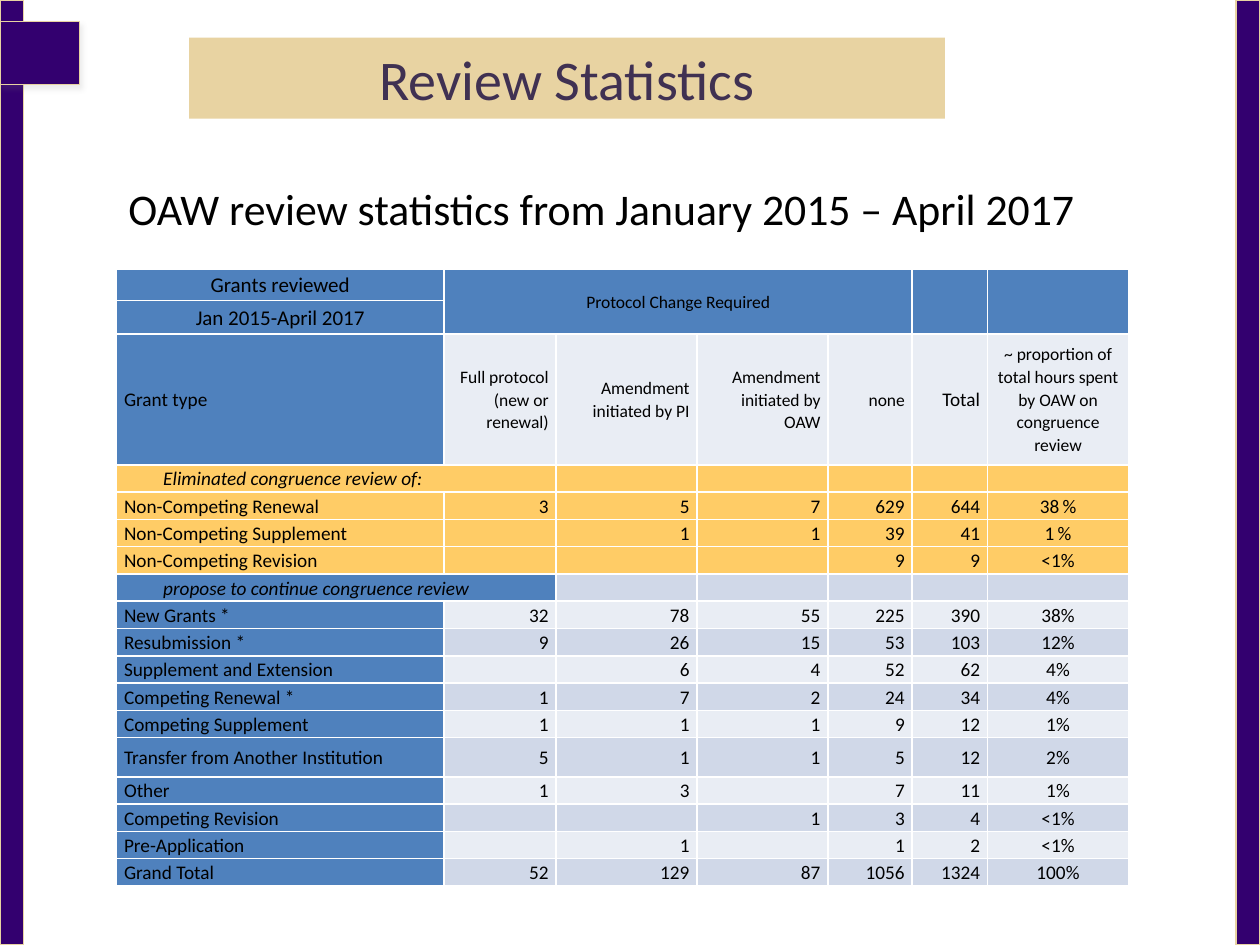
from lxml import etree
from pptx import Presentation
from pptx.dml.color import RGBColor
from pptx.enum.shapes import MSO_SHAPE
from pptx.enum.text import MSO_ANCHOR, PP_ALIGN
from pptx.oxml.ns import qn
from pptx.util import Cm, Pt

RECT = MSO_SHAPE.RECTANGLE
MIDDLE, TOP = MSO_ANCHOR.MIDDLE, MSO_ANCHOR.TOP
LEFT, CENTER, RIGHT = PP_ALIGN.LEFT, PP_ALIGN.CENTER, PP_ALIGN.RIGHT

FONT = "Calibri"
NBSP = chr(160)
PURPLE, GOLD, BLACK, WHITE = "33006F", "E8D3A2", "000000", "FFFFFF"
BLUE, YELLOW, LIGHT, DARK = "4F81BD", "FFCC66", "E9EDF4", "D0D8E8"

TITLE = "Review Statistics"
SUBTITLE = "OAW review statistics from January 2015 – April 2017"
ROWS = [
    ["Grants reviewed", "Protocol Change Required", "", "", "", "", ""],
    ["Jan 2015-April 2017", "", "", "", "", "", ""],
    ["Grant type", "Full protocol (new or renewal)", "Amendment initiated by PI",
     "Amendment initiated by OAW", "none", "Total",
     "~ proportion of total hours spent by OAW on congruence review"],
    ["Eliminated congruence review of:", "", "", "", "", "", ""],
    ["Non-Competing Renewal", "3", "5", "7", "629", "644", f"38{NBSP}%"],
    ["Non-Competing Supplement", "", "1", "1", "39", "41", f"1{NBSP}%"],
    ["Non-Competing Revision", "", "", "", "9", "9", "<1%"],
    ["propose to continue congruence review", "", "", "", "", "", ""],
    ["New Grants *", "32", "78", "55", "225", "390", "38%"],
    ["Resubmission *", "9", "26", "15", "53", "103", "12%"],
    ["Supplement and Extension", "", "6", "4", "52", "62", "4%"],
    ["Competing Renewal *", "1", "7", "2", "24", "34", "4%"],
    ["Competing Supplement", "1", "1", "1", "9", "12", "1%"],
    ["Transfer from Another Institution", "5", "1", "1", "5", "12", "2%"],
    ["Other", "1", "3", "", "7", "11", "1%"],
    ["Competing Revision", "", "", "1", "3", "4", "<1%"],
    ["Pre-Application", "", "1", "", "1", "2", "<1%"],
    ["Grand Total", "52", "129", "87", "1056", "1324", "100%"],
]
COL_WIDTHS = [6.6, 2.26, 2.84, 2.64, 1.7, 1.52, 2.84]
ROW_HEIGHT = 0.55
SPECIAL_HEIGHTS = {0: 0.64, 1: 0.67, 2: 2.64, 13: 0.79}
HEADER_ROW = 2
SECTION_ROWS = (3, 7)
ELIMINATED_ROWS = range(3, 7)
MERGES = [((0, 1), (1, 4)), ((0, 5), (1, 5)), ((0, 6), (1, 6)),
          ((3, 0), (3, 1)), ((7, 0), (7, 1))]
BARS = [(0, 0, 0.48, 19.05), (0, 0.43, 1.6, 1.27), (24.92, 0, 0.48, 19.05)]


def rgb(color):
    return RGBColor.from_string(color)


def set_font(p, size, color):
    p.font.name, p.font.size = FONT, Pt(size)
    p.font.color.rgb = rgb(color)


def add_bar(s, box):
    bar = s.shapes.add_shape(RECT, *map(Cm, box))
    bar.shadow.inherit = False
    bar.fill.solid()
    bar.fill.fore_color.rgb = rgb(PURPLE)
    bar.line.color.rgb = rgb(GOLD)
    bar.line.width = Pt(0.75)
    return bar


def add_shadow(sp):
    effects = sp._element.spPr.find(qn("a:effectLst"))
    shadow = etree.SubElement(effects, qn("a:outerShdw"), blurRad=str(Pt(3)),
                              dist=str(Pt(3)), dir="3600000", rotWithShape="0")
    color = etree.SubElement(shadow, qn("a:srgbClr"), val="808080")
    etree.SubElement(color, qn("a:alpha"), val="15000")


def add_borders(cell):
    tc_pr = cell._tc.get_or_add_tcPr()
    for i, side in enumerate(("lnL", "lnR", "lnT", "lnB")):
        ln = etree.Element(qn(f"a:{side}"), w=str(Pt(1)))
        fill = etree.SubElement(ln, qn("a:solidFill"))
        etree.SubElement(fill, qn("a:srgbClr"), val=WHITE)
        tc_pr.insert(i, ln)


def cell_fill(row, col):
    if row in ELIMINATED_ROWS:
        return YELLOW
    if row < HEADER_ROW or col == 0:
        return BLUE
    return DARK if row % 2 else LIGHT


def cell_size(row, col):
    if row < HEADER_ROW:
        return 10 if col else 12
    return 10 if row == HEADER_ROW and col not in (0, 5) else 11


def cell_align(row, col):
    if row < HEADER_ROW or col == len(COL_WIDTHS) - 1:
        return CENTER
    return RIGHT if col else LEFT


def format_cell(cell, row, col, text):
    cell.fill.solid()
    cell.fill.fore_color.rgb = rgb(cell_fill(row, col))
    add_borders(cell)
    cell.vertical_anchor = MIDDLE
    cell.margin_left = cell.margin_right = Cm(0.15)
    cell.margin_top = cell.margin_bottom = 0
    p = cell.text_frame.paragraphs[0]
    p.alignment, p.line_spacing = cell_align(row, col), 1.07
    set_font(p, cell_size(row, col), BLACK)
    for part in filter(None, text.partition(NBSP)):
        r = p.add_run()
        r.text = part
        if part == NBSP:
            r.font.size = Pt(8)
    if row in SECTION_ROWS and col == 0:
        p.font.italic = True
        p._p.get_or_add_pPr().set("indent", str(Cm(0.79)))


def add_statistics(s):
    heights = [SPECIAL_HEIGHTS.get(i, ROW_HEIGHT) for i in range(len(ROWS))]
    table = s.shapes.add_table(len(ROWS), len(COL_WIDTHS), Cm(2.35), Cm(5.42),
                               Cm(sum(COL_WIDTHS)), Cm(sum(heights))).table
    table.first_row = table.horz_banding = False
    for column, width in zip(table.columns, COL_WIDTHS):
        column.width = Cm(width)
    for row, height in zip(table.rows, heights):
        row.height = Cm(height)
    for i, texts in enumerate(ROWS):
        for j, text in enumerate(texts):
            format_cell(table.cell(i, j), i, j, text)
    for first, last in MERGES:
        table.cell(*first).merge(table.cell(*last))


def add_title(s):
    title = s.shapes.title
    title.left, title.top, title.width, title.height = map(Cm, (3.81, 0.76, 15.24, 1.63))
    title.fill.solid()
    title.fill.fore_color.rgb = rgb(GOLD)
    tf = title.text_frame
    tf.text, tf.vertical_anchor = TITLE, MIDDLE
    tf.paragraphs[0].alignment = CENTER
    set_font(tf.paragraphs[0], 32, "403152")


def add_subtitle(s):
    tf = s.shapes.add_textbox(Cm(2.34), Cm(3.53), Cm(20.52), Cm(1.4)).text_frame
    tf.word_wrap, tf.vertical_anchor = True, TOP
    tf.text = SUBTITLE
    set_font(tf.paragraphs[0], 25, BLACK)


def main():
    prs = Presentation()
    prs.slide_width, prs.slide_height = Cm(25.4), Cm(19.05)
    s = prs.slides.add_slide(prs.slide_layouts[5])
    left_bar, tab, right_bar = [add_bar(s, box) for box in BARS]
    add_shadow(tab)
    add_title(s)
    add_statistics(s)
    add_subtitle(s)
    prs.save("out.pptx")


if __name__ == "__main__":
    main()
